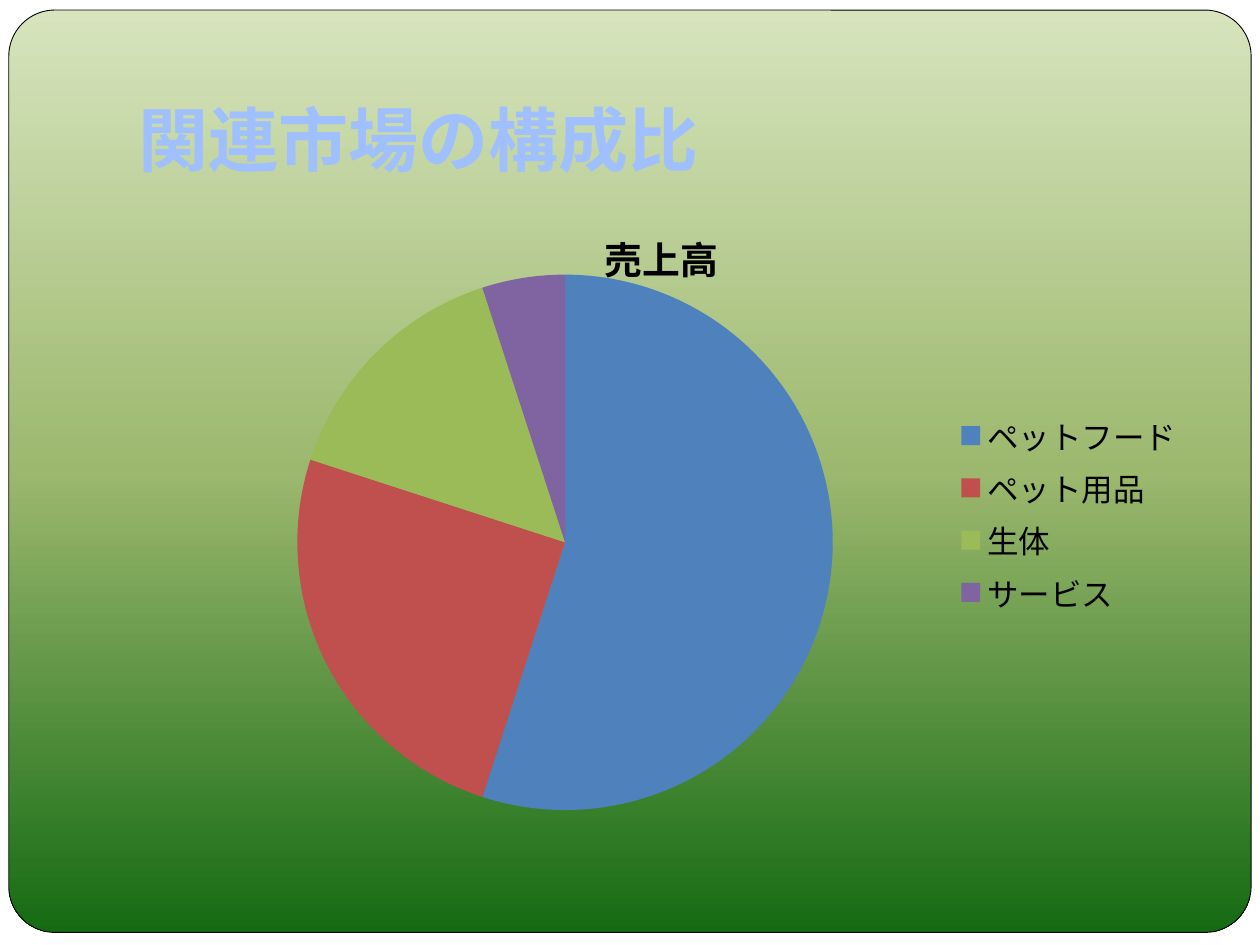
from lxml import etree
from pptx import Presentation
from pptx.chart.data import CategoryChartData
from pptx.dml.color import RGBColor
from pptx.enum import chart as ce, shapes, text
from pptx.oxml import parse_xml
from pptx.oxml.ns import nsdecls, qn
from pptx.util import Inches, Pt

FONT = "Calibri"
STOPS = ((0, "D7E4BD"), (50, "9CB86E"), (100, "156B13"))
SHARES = (("ペットフード", 55, "4F81BD"), ("ペット用品", 25, "C0504D"),
          ("生体", 15, "9BBB59"), ("サービス", 5, "8064A2"))


def rgb(code):
    """Turn a hex string into a colour."""
    return RGBColor.from_string(code)


def style(font, size, code, bold=False):
    """Set the face, size, colour and weight of a font."""
    font.name, font.size, font.bold = FONT, Pt(size), bold
    font.color.rgb = rgb(code)


def shade(fill, node):
    """Give a fill the green gradient, running from top to bottom."""
    fill.gradient()
    fill.gradient_angle = 270
    stops = node.find(".//" + qn("a:gsLst"))
    for old in list(stops):
        stops.remove(old)
    for pos, code in STOPS:
        stop = etree.SubElement(stops, qn("a:gs"), pos=str(pos * 1000))
        etree.SubElement(stop, qn("a:srgbClr"), val=code)


def add_back(slide, box):
    """Put a white sheet and a rounded green panel behind everything."""
    shade(slide.background.fill, slide.element)
    left, top, width, height = box
    sheet = slide.shapes.add_shape(shapes.MSO_SHAPE.RECTANGLE, *box)
    sheet.fill.solid()
    sheet.fill.fore_color.rgb = rgb("FFFFFF")
    sheet.line.fill.background()
    panel = slide.shapes.add_shape(
        shapes.MSO_SHAPE.ROUNDED_RECTANGLE, left + Inches(0.07),
        top + Inches(0.08), width - Inches(0.14), height - Inches(0.18))
    panel.adjustments[0] = 0.05
    shade(panel.fill, panel.element)
    panel.line.color.rgb = rgb("000000")
    panel.line.width = Pt(0.5)
    for place, shape in enumerate((sheet, panel), 2):
        shape.shadow.inherit = False
        slide.shapes.element.insert(place, shape.element)


def add_title(slide, box):
    """Fill and place the title."""
    title = slide.shapes.title
    title.left, title.top, title.width, title.height = box
    frame = title.text_frame
    frame.text = "関連市場の構成比"
    frame.vertical_anchor = text.MSO_ANCHOR.MIDDLE
    line = frame.paragraphs[0]
    line.alignment = text.PP_ALIGN.LEFT
    style(line.runs[0].font, 40, "9FBFFF", True)


def set_plot(chart, box):
    """Fix the inner plot area as fractions of the chart."""
    area = chart.element.find(".//" + qn("c:plotArea"))
    for old in area.findall(qn("c:layout")):
        area.remove(old)
    sizes = "".join(f'<c:{tag} val="{val}"/>' for tag, val in zip("xywh", box))
    area.insert(0, parse_xml(
        f'<c:layout {nsdecls("c")}><c:manualLayout>'
        '<c:layoutTarget val="inner"/><c:xMode val="edge"/>'
        f'<c:yMode val="edge"/>{sizes}</c:manualLayout></c:layout>'))


def add_pie(slide, box):
    """Draw the pie of market shares with its title and legend."""
    data = CategoryChartData()
    names, vals, codes = zip(*SHARES)
    data.categories = names
    data.add_series("売上高", vals)
    chart = slide.shapes.add_chart(ce.XL_CHART_TYPE.PIE, *box, data).chart
    style(chart.font, 18, "000000")
    chart.has_title = True
    head = chart.chart_title.text_frame
    head.text = "売上高"
    style(head.paragraphs[0].runs[0].font, 21.6, "000000", True)
    chart.has_legend = True
    chart.legend.position = ce.XL_LEGEND_POSITION.RIGHT
    chart.legend.include_in_layout = False
    plot = chart.plots[0]
    plot.vary_by_categories = True
    for i, code in enumerate(codes):
        fill = plot.series[0].points[i].format.fill
        fill.solid()
        fill.fore_color.rgb = rgb(code)
    set_plot(chart, (0.02, 0.12, 0.78, 0.85))


def main():
    """Build and save the slide."""
    deck = Presentation()
    deck.slide_width, deck.slide_height = Inches(10), Inches(7.5)
    slide = deck.slides.add_slide(deck.slide_layouts[5])
    add_back(slide, (0, 0, deck.slide_width, deck.slide_height))
    add_title(slide, [Inches(n) for n in (1, 0.6, 8.5, 1)])
    add_pie(slide, [Inches(n) for n in (1, 1.58, 8.5, 5)])
    deck.save("out.pptx")


if __name__ == "__main__":
    main()
